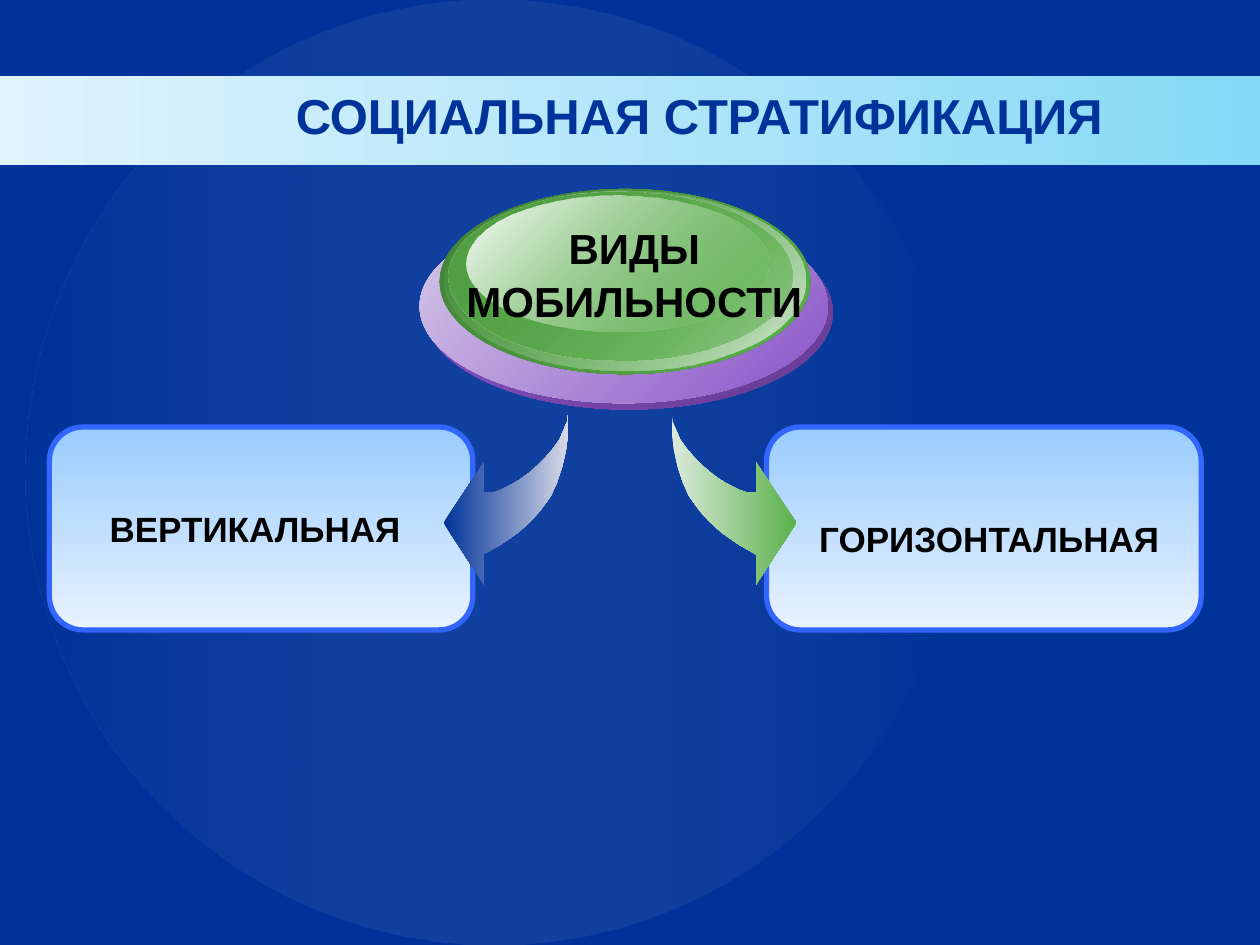
from lxml.etree import SubElement
from pptx import Presentation
from pptx.dml.color import RGBColor
from pptx.enum.shapes import MSO_SHAPE
from pptx.enum.text import MSO_ANCHOR, PP_ALIGN
from pptx.oxml.ns import qn
from pptx.util import Pt

COLORS = {
    "navy": "003399", "white": "FFFFFF", "black": "000000",
    "ice": "E0F3FC", "cyan": "85D9F7",
    "sky": "99CCFF", "pale sky": "E9F2FF", "border": "3366FF",
    "silver": "D8D9E5", "mint": "DCEADB",
    "purple": "8A52C8", "dark purple": "653C92", "lilac": "D6CBE9",
    "green": "5AB14B", "dark green": "407F36", "mid green": "51A044",
    "pale green": "D8E8D7",
}


def paint(shape, start, end, angle=0, alphas=(100, 100)):
    """Clockwise two-stop gradient, with opacity in percent; no line or shadow."""
    shape.shadow.inherit = False
    shape.line.fill.background()
    shape.fill.gradient()
    shape.fill.gradient_angle = -angle % 360
    for stop, color in zip(shape.fill.gradient_stops, (start, end)):
        stop.color.rgb = RGBColor.from_string(COLORS[color])
    for rgb, alpha in zip(shape.element.spPr.iter(qn("a:srgbClr")), alphas):
        if alpha < 100:
            SubElement(rgb, qn("a:alpha")).set("val", str(alpha * 1000))


def write(box, lines, size, color, align, wrap=True):
    """Bold Arial lines, the first in the existing paragraph."""
    frame = slide.shapes.add_textbox(*map(Pt, box)).text_frame
    frame.word_wrap = wrap
    for number, line in enumerate(lines):
        paragraph = frame.add_paragraph() if number else frame.paragraphs[0]
        paragraph.alignment = align
        if number:
            paragraph.space_before = Pt(1.5)
        run = paragraph.add_run()
        run.text = line
        run.font.name = "Arial"
        run.font.size = Pt(size)
        run.font.bold = True
        run.font.color.rgb = RGBColor.from_string(COLORS[color])
    return frame


prs = Presentation()
prs.slide_width, prs.slide_height = Pt(720), Pt(540)
slide = prs.slides.add_slide(prs.slide_layouts[6])
slide.background.fill.solid()
slide.background.fill.fore_color.rgb = RGBColor.from_string(COLORS["navy"])

# Backdrop circle and title band
halo = slide.shapes.add_shape(MSO_SHAPE.OVAL, Pt(14.4), Pt(0), Pt(535.7), Pt(540))
paint(halo, "navy", "white", alphas=(27, 0))
band = slide.shapes.add_shape(MSO_SHAPE.RECTANGLE, Pt(0), Pt(43.4), Pt(720), Pt(51))
paint(band, "ice", "cyan")
title = write((162, 40.5, 498, 50.4), ["СОЦИАЛЬНАЯ СТРАТИФИКАЦИЯ"], 28, "navy", PP_ALIGN.LEFT)
title.vertical_anchor = MSO_ANCHOR.MIDDLE

# Cards for the two kinds of mobility
for left, width in ((438, 248.4), (28.2, 242)):
    card = slide.shapes.add_shape(MSO_SHAPE.ROUNDED_RECTANGLE, Pt(left), Pt(244), Pt(width), Pt(116))
    card.adjustments[0] = 0.167
    paint(card, "sky", "pale sky", angle=90)
    card.line.color.rgb = RGBColor.from_string(COLORS["border"])
    card.line.width = Pt(3)

# Mirrored curved arrows: offsets from the tail, in hundredths of an inch
CURVE = [(0, 15), (2, 30), (5, 43), (9, 55), (14, 66), (22, 77), (30, 86),
         (40, 95), (53, 104), (67, 112), (67, 136), (99, 87), (67, 39),
         (67, 63), (60, 63), (54, 61), (46, 57), (39, 53), (32, 48), (25, 42),
         (18, 35), (12, 28), (7, 21), (4, 14), (1, 7)]
for tail, direction, start, end in ((451, -1, "navy", "silver"), (533, 1, "mint", "green")):
    outline = slide.shapes.build_freeform(tail, 328, scale=Pt(0.72))
    outline.add_line_segments([(tail + direction * x, 328 + y) for x, y in CURVE])
    paint(outline.convert_to_shape(), start, end)

# Central button, from the purple base up to the highlight
for left, top, width, height, start, end, alphas in (
    (242.6, 123.1, 233.3, 110.9, "purple", "dark purple", (100, 100)),
    (239.8, 119.5, 233.3, 110.9, "lilac", "purple", (100, 100)),
    (251.3, 108, 211.7, 105.8, "dark green", "green", (100, 100)),
    (254.2, 108.7, 205.9, 103, "green", "pale green", (0, 100)),
    (256.3, 109.4, 196.6, 96.5, "mid green", "green", (100, 48)),
    (266.4, 111.6, 172.8, 77.8, "white", "green", (100, 38)),
):
    disc = slide.shapes.add_shape(MSO_SHAPE.OVAL, Pt(left), Pt(top), Pt(width), Pt(height))
    paint(disc, start, end, angle=45, alphas=alphas)

# Labels
write((258.5, 123.8, 208, 65.5), ["ВИДЫ", "МОБИЛЬНОСТИ"], 24, "black", PP_ALIGN.CENTER, wrap=False)
write((33.8, 286.6, 224, 31.7), ["ВЕРТИКАЛЬНАЯ"], 20, "black", PP_ALIGN.CENTER)
write((455.8, 292.3, 218.9, 31.7), ["ГОРИЗОНТАЛЬНАЯ"], 20, "black", PP_ALIGN.CENTER)

prs.save("out.pptx")
